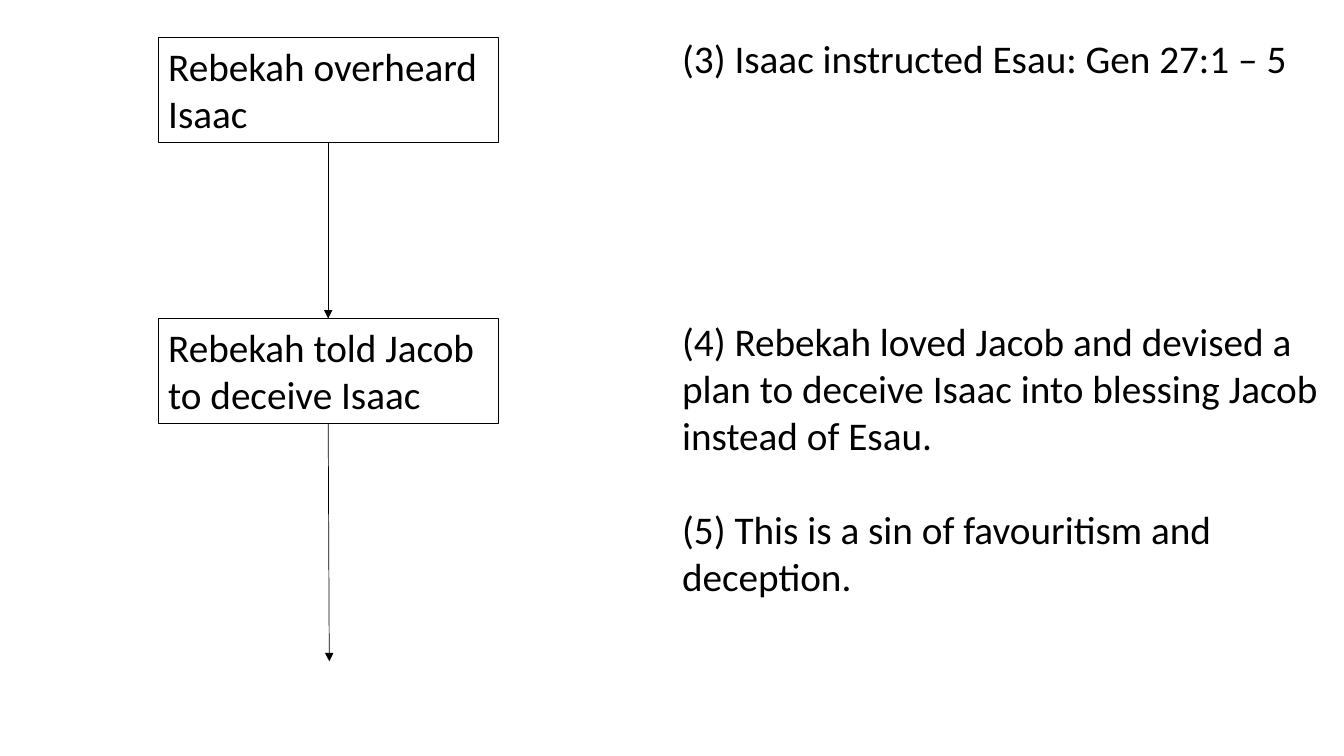
"""Build the slide on Rebekah's plan: a two-step flow beside its numbered notes."""
from dataclasses import dataclass
from typing import Any

from lxml import etree
from pptx import Presentation
from pptx.dml.color import RGBColor
from pptx.enum.shapes import MSO_CONNECTOR, MSO_SHAPE
from pptx.enum.text import MSO_ANCHOR, MSO_AUTO_SIZE, PP_ALIGN
from pptx.oxml.ns import qn
from pptx.util import Inches, Pt

RECTANGLE = MSO_SHAPE.RECTANGLE
STRAIGHT = MSO_CONNECTOR.STRAIGHT
TOP = MSO_ANCHOR.TOP
LEFT = PP_ALIGN.LEFT
NO_AUTOFIT = MSO_AUTO_SIZE.NONE
TOP_SITE, BOTTOM_SITE = 0, 2

SLIDE_WIDTH, SLIDE_HEIGHT = Inches(13.33), Inches(7.5)
TITLE_AND_CONTENT = 1


@dataclass(frozen=True)
class Theme:
    """Colours, type and line weights of the slide."""
    ink: RGBColor = RGBColor(0, 0, 0)
    font: str = "Calibri"
    text_size: float = 28
    line_pitch: float = 33.7
    box_line: float = 0.75
    arrow_line: float = 0.5


@dataclass(frozen=True)
class Step:
    """A boxed event, placed by its top row."""
    text: str
    row: float


@dataclass(frozen=True)
class Note:
    """A numbered note and the text lines left free above it."""
    text: str
    lines_above: int


THEME = Theme()
STEP_COLUMN, STEP_COLUMNS, STEP_ROWS = 11.78, 25.28, 13.9
NOTES_COLUMN, NOTES_ROW, NOTES_COLUMNS, NOTES_ROWS = 50, 3.87, 50, 84.8
FLOW_END_COLUMN, FLOW_END_ROW = 24.5, 87.47

STEPS = (
    Step("Rebekah overheard Isaac", 4.93),
    Step("Rebekah told Jacob to deceive Isaac", 42.13),
)
NOTES = (
    Note("(3) Isaac instructed Esau: Gen 27:1 – 5", 0),
    Note("(4) Rebekah loved Jacob and devised a plan to deceive Isaac "
         "into blessing Jacob instead of Esau.", 5),
    Note("(5) This is a sin of favouritism and deception.", 1),
)


def across(columns: float) -> int:
    """Turn hundredths of the slide's width into a length."""
    return round(SLIDE_WIDTH * columns / 100)


def down(rows: float) -> int:
    """Turn hundredths of the slide's height into a length."""
    return round(SLIDE_HEIGHT * rows / 100)


def add_text(paragraph: Any, text: str) -> None:
    """Add one run in the theme's type, aligned left."""
    paragraph.alignment = LEFT
    run = paragraph.add_run()
    run.text = text
    run.font.name = THEME.font
    run.font.size = Pt(THEME.text_size)
    run.font.color.rgb = THEME.ink


def set_frame(frame: Any) -> None:
    """Wrap the text from the top at its full size."""
    frame.word_wrap = True
    frame.auto_size = NO_AUTOFIT
    frame.vertical_anchor = TOP


def add_step(slide: Any, step: Step) -> Any:
    """Draw the outlined box of one event."""
    box = slide.shapes.add_shape(
        RECTANGLE, across(STEP_COLUMN), down(step.row),
        across(STEP_COLUMNS), down(STEP_ROWS))
    box.shadow.inherit = False
    box.fill.background()
    box.line.color.rgb = THEME.ink
    box.line.width = Pt(THEME.box_line)
    set_frame(box.text_frame)
    add_text(box.text_frame.paragraphs[0], step.text)
    return box


def add_arrow(slide: Any, source: Any, target: Any = None) -> None:
    """Lead from a box to the next one, or to the end of the flow."""
    arrow = slide.shapes.add_connector(
        STRAIGHT, 0, 0, across(FLOW_END_COLUMN), down(FLOW_END_ROW))
    arrow.begin_connect(source, BOTTOM_SITE)
    if target is not None:
        arrow.end_connect(target, TOP_SITE)
    arrow.line.color.rgb = THEME.ink
    arrow.line.width = Pt(THEME.arrow_line)
    properties = arrow.element.spPr
    etree.SubElement(properties.find(qn("a:ln")), qn("a:tailEnd"), type="triangle")
    etree.SubElement(properties, qn("a:effectLst"))


def fill_notes(body: Any) -> None:
    """Place the notes in the body without bullets."""
    body.left, body.top = across(NOTES_COLUMN), down(NOTES_ROW)
    body.width, body.height = across(NOTES_COLUMNS), down(NOTES_ROWS)
    frame = body.text_frame
    set_frame(frame)
    for index, note in enumerate(NOTES):
        paragraph = frame.add_paragraph() if index else frame.paragraphs[0]
        add_text(paragraph, note.text)
        paragraph.space_before = Pt(note.lines_above * THEME.line_pitch)
        paragraph.space_after = Pt(0)
    for properties in body.element.iter(qn("a:pPr")):
        properties.set("marL", "0")
        properties.set("indent", "0")
        etree.SubElement(properties, qn("a:buNone"))


def main() -> None:
    """Build and save the slide."""
    deck = Presentation()
    deck.slide_width, deck.slide_height = SLIDE_WIDTH, SLIDE_HEIGHT
    slide = deck.slides.add_slide(deck.slide_layouts[TITLE_AND_CONTENT])
    title, notes = slide.placeholders
    title.element.getparent().remove(title.element)
    fill_notes(notes)
    overheard, told = [add_step(slide, step) for step in STEPS]
    add_arrow(slide, overheard, told)
    add_arrow(slide, told)
    deck.save("out.pptx")


if __name__ == "__main__":
    main()
